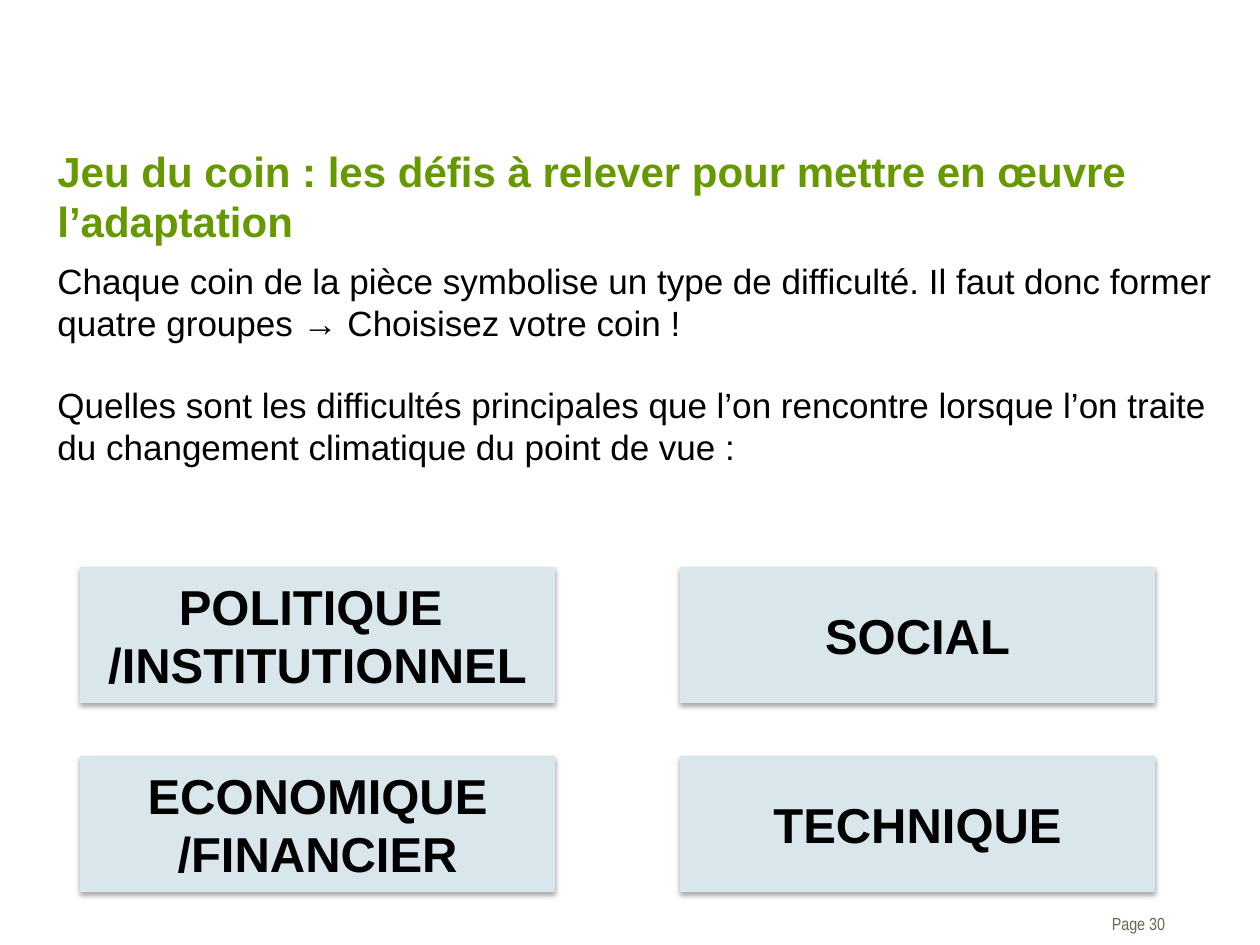
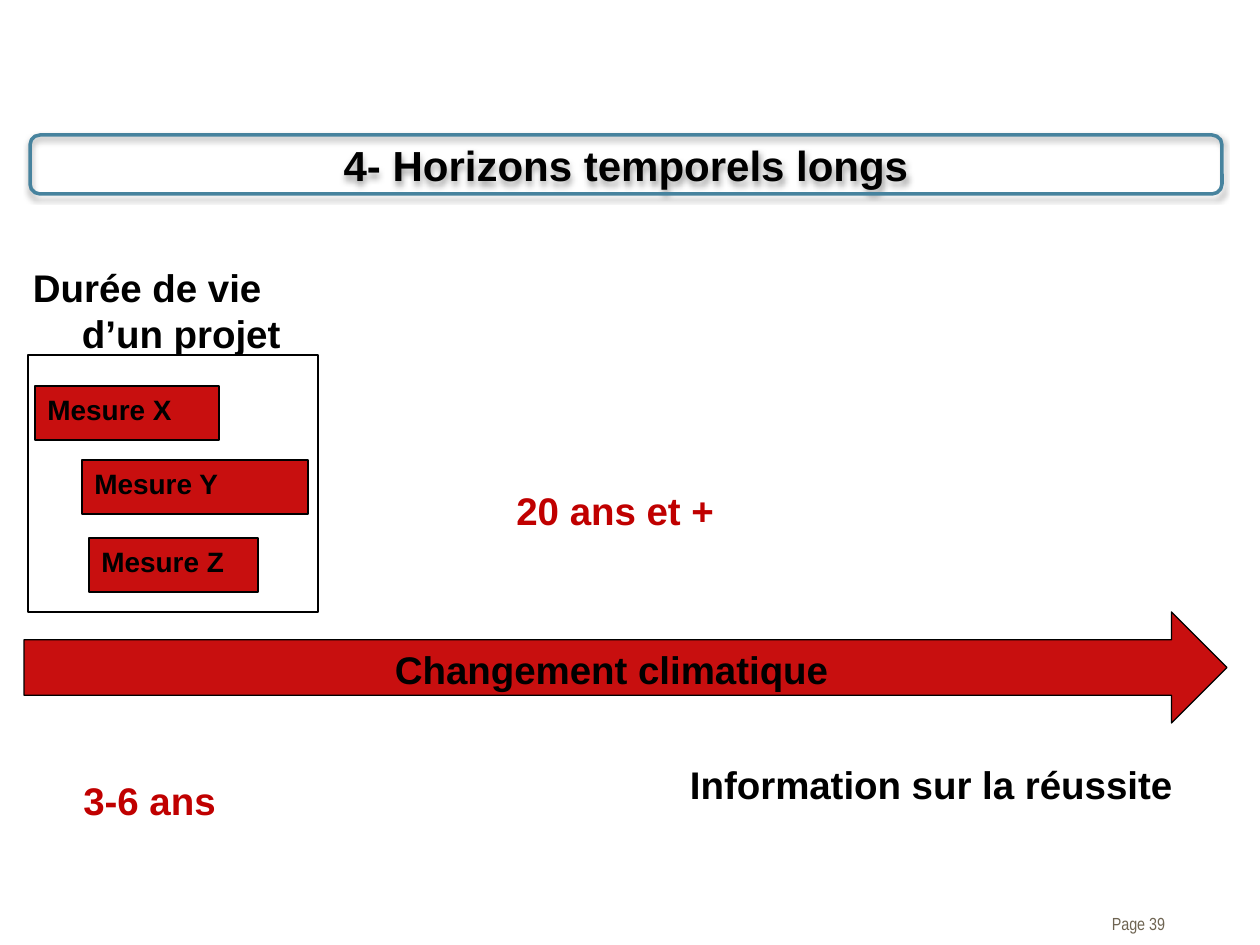
from dataclasses import dataclass

from lxml import etree
from pptx import Presentation
from pptx.dml.color import RGBColor
from pptx.enum.shapes import MSO_SHAPE
from pptx.enum.text import MSO_ANCHOR, PP_ALIGN
from pptx.oxml.ns import qn
from pptx.util import Emu, Pt

EMU_PER_PX = 914400 / 126
RECT = MSO_SHAPE.RECTANGLE
ROUND_RECT = MSO_SHAPE.ROUNDED_RECTANGLE
ARROW = MSO_SHAPE.RIGHT_ARROW
LEFT, CENTER, RIGHT = PP_ALIGN.LEFT, PP_ALIGN.CENTER, PP_ALIGN.RIGHT
TOP, MIDDLE = MSO_ANCHOR.TOP, MSO_ANCHOR.MIDDLE


@dataclass(frozen=True)
class Theme:
    font: str = "Arial"
    footer_font: str = "Arial Narrow"
    black: str = "000000"
    green: str = "669900"
    pale_blue: str = "D9E7ED"
    blue: str = "47839E"
    red: str = "C80F0F"
    dark_red: str = "C00000"
    taupe: str = "6E6452"
    card_size: int = 28
    title_size: int = 24
    label_size: int = 22
    body_size: int = 20
    bar_size: int = 16
    footer_size: int = 10


THEME = Theme()


def px(length):
    return Emu(round(length * EMU_PER_PX))


def write(shape, lines, size, color=THEME.black, bold=True, align=LEFT,
          anchor=TOP, font=THEME.font, gap=0):
    frame = shape.text_frame
    frame.word_wrap = True
    frame.vertical_anchor = anchor
    for index, line in enumerate(lines):
        para = frame.paragraphs[0] if index == 0 else frame.add_paragraph()
        para.alignment = align
        if index and gap:
            para.space_before = Pt(gap)
        span = para.add_run()
        span.text = line
        span.font.name = font
        span.font.size = Pt(size)
        span.font.bold = bold
        span.font.color.rgb = RGBColor.from_string(color)


def set_insets(box, left, top, right, bottom):
    frame = box.text_frame
    frame.margin_left, frame.margin_top = px(left), px(top)
    frame.margin_right, frame.margin_bottom = px(right), px(bottom)


def add_text(page, bounds, lines, size, **style):
    box = page.shapes.add_textbox(*map(px, bounds))
    write(box, lines, size, **style)
    return box


def add_block(page, kind, bounds, fill=None, line=None, weight=0.75):
    block = page.shapes.add_shape(kind, *map(px, bounds))
    block.shadow.inherit = False
    if fill:
        block.fill.solid()
        block.fill.fore_color.rgb = RGBColor.from_string(fill)
    else:
        block.fill.background()
    if line:
        block.line.color.rgb = RGBColor.from_string(line)
        block.line.width = Pt(weight)
    else:
        block.line.fill.background()
    return block


def add_shadow(block):
    effects = block.element.spPr.find(qn("a:effectLst"))
    shadow = etree.SubElement(effects, qn("a:outerShdw"), blurRad=str(Pt(3.1)),
                              dist=str(Pt(1.8)), dir="5400000", rotWithShape="0")
    color = etree.SubElement(shadow, qn("a:srgbClr"), val=THEME.black)
    etree.SubElement(color, qn("a:alpha"), val="35000")


def add_hanging_label(page, bounds, text):
    box = add_text(page, bounds, [text], THEME.label_size)
    set_insets(box, 0, 0, 0, 0)
    properties = box.text_frame.paragraphs[0]._p.get_or_add_pPr()
    properties.set("marL", str(px(74)))
    properties.set("indent", str(px(-49)))


def add_page(deck, number):
    page = deck.slides.add_slide(deck.slide_layouts[6])
    footer = add_text(page, (1038, 907, 127, 34), [f"Page {number}"],
                      THEME.footer_size, color=THEME.taupe, bold=False,
                      align=RIGHT, font=THEME.footer_font)
    set_insets(footer, 13, 6, 0, 6)
    return page


def add_card(page, column, row, lines):
    card = add_block(page, RECT, (80 + 600 * column, 567 + 189 * row, 475, 136),
                     fill=THEME.pale_blue)
    add_shadow(card)
    write(card, lines, THEME.card_size, align=CENTER, anchor=MIDDLE)


def add_measure(page, left, top, width, text):
    bar = add_block(page, RECT, (left, top, width, 54), THEME.red, THEME.black)
    write(bar, [text], THEME.bar_size)


def build_corner_game(deck):
    page = add_page(deck, 30)
    cards = [
        ["POLITIQUE ", "/INSTITUTIONNEL"], ["SOCIAL"],
        ["ECONOMIQUE", "/FINANCIER"], ["TECHNIQUE"],
    ]
    for index, lines in enumerate(cards):
        add_card(page, index % 2, index // 2, lines)
    add_text(page, (45, 253, 1191, 267), [
        "Chaque coin de la pièce symbolise un type de difficulté. "
        "Il faut donc former quatre groupes → Choisisez votre coin !",
        "Quelles sont les difficultés principales que l’on rencontre "
        "lorsque l’on traite du changement climatique du point de vue :",
    ], THEME.body_size, bold=False, gap=23)
    add_text(page, (45, 139, 1155, 115),
             ["Jeu du coin : les défis à relever pour mettre en œuvre l’adaptation"],
             THEME.title_size, color=THEME.green)


def build_time_horizons(deck):
    page = add_page(deck, 39)
    add_hanging_label(page, (8, 264, 310, 93), "Durée de vie d’un projet")
    title = add_block(page, ROUND_RECT, (30, 135, 1192, 59),
                      line=THEME.blue, weight=2)
    add_shadow(title)
    write(title, ["4- Horizons temporels longs"], THEME.title_size,
          align=CENTER, anchor=MIDDLE)
    climate = add_block(page, ARROW, (24, 612, 1203, 111), THEME.red, THEME.black)
    write(climate, ["Changement climatique"], THEME.label_size, align=CENTER)
    add_block(page, RECT, (28, 355, 290, 257), line=THEME.black)
    add_measure(page, 35, 386, 184, "Mesure X")
    add_measure(page, 82, 460, 226, "Mesure Y")
    add_measure(page, 89, 538, 169, "Mesure Z")
    add_hanging_label(page, (665, 761, 615, 47), "Information sur la réussite")
    for bounds, text in (((71, 771, 214, 59), "3-6 ans"),
                         ((504, 481, 258, 59), "20 ans et +")):
        add_text(page, bounds, [text], THEME.label_size, color=THEME.dark_red)


def main():
    deck = Presentation()
    deck.slide_width, deck.slide_height = px(1260), px(945)
    build_corner_game(deck)
    build_time_horizons(deck)
    deck.save("out.pptx")


if __name__ == "__main__":
    main()
